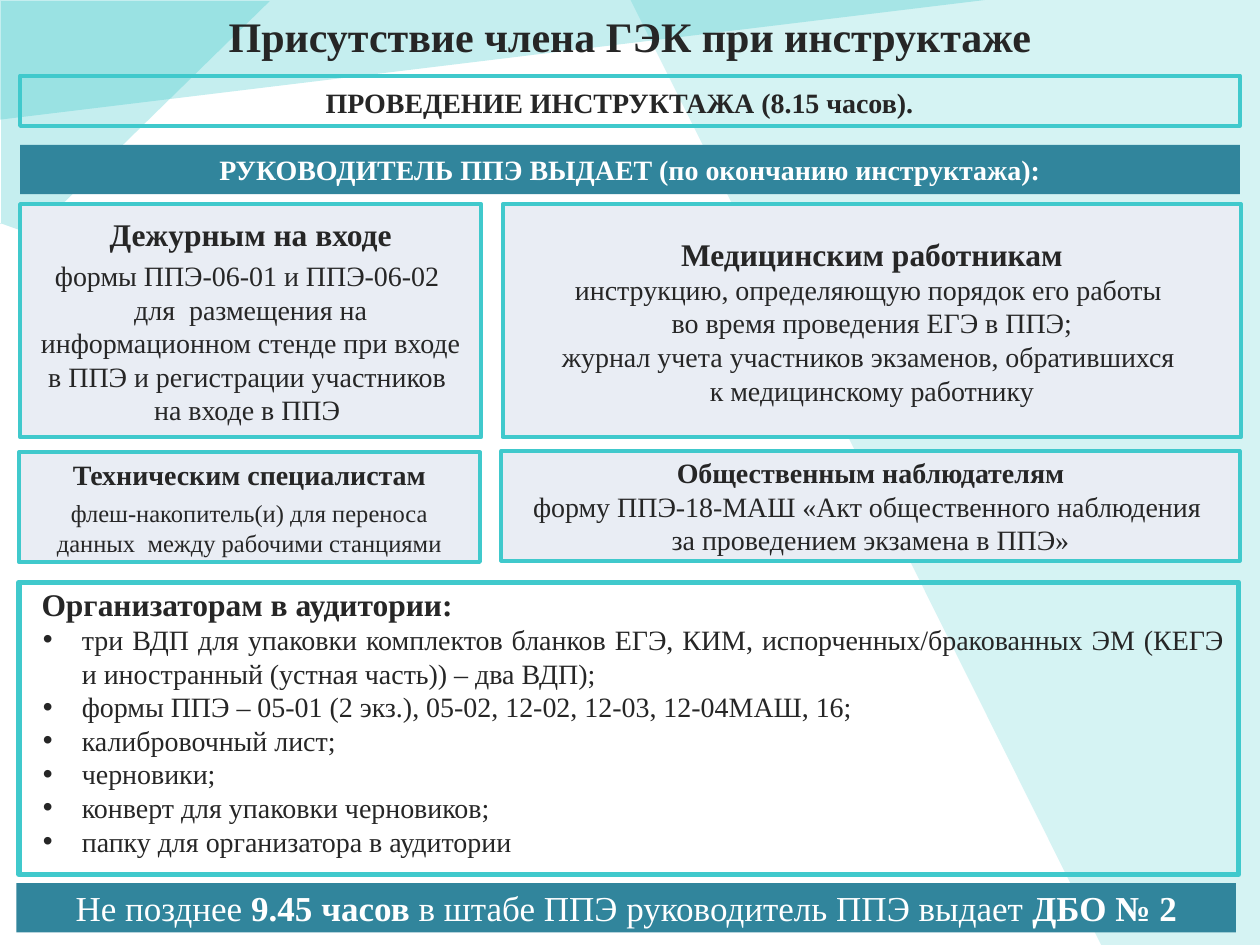
import pptx
import pptx.dml.color
import pptx.enum.shapes
import pptx.enum.text
import pptx.oxml
import pptx.oxml.ns
import pptx.util
from lxml import etree

Inches = pptx.util.Inches
Pt = pptx.util.Pt
ALIGN = pptx.enum.text.PP_ALIGN
ANCHOR = pptx.enum.text.MSO_ANCHOR

FONT = "Times New Roman"
DARK, WHITE = "262626", "FFFFFF"
TURQUOISE, BLUE, PALE = "40C9CC", "31859C", "E9EDF4"
BACKDROP = "20C0C4"
INSETS = (0.1, 0.05, 0.1, 0.05)

# Backdrop: outline points and opacity in percent
BACKDROP_SHAPES = [
    ([(10.04, 7.5), (8.74, 7.5), (5, -0.01), (10.04, -0.01)], 19),
    ([(7.82, 0), (0, 0.95), (0, -0.01)], 26),
    ([(0, 1.77), (0.25, 1.86), (2.14, 0.01), (0.01, 0.01), (0.01, 1.78)], 26),
]

# A paragraph is its runs (text, bold), then size and space before
TITLE = [([("Присутствие члена ГЭК при инструктаже", True)], 24, 0)]
BRIEFING = [([("ПРОВЕДЕНИЕ ИНСТРУКТАЖА (8.15 часов). ", True)], 16, 0)]

BANNERS = [
    ((0.16, 1.15), [([("РУКОВОДИТЕЛЬ ППЭ ВЫДАЕТ (по окончанию инструктажа):", True)], 16, 3.9)]),
    ((0.13, 7.01), [([
        ("Не позднее ", False),
        ("9.45 часов", True),
        (" в штабе ППЭ руководитель ППЭ выдает ", False),
        ("ДБО № 2", True),
    ], 20, 3.9)]),
]

CARDS = [
    ((0.16, 1.62, 3.66, 1.85), [
        ([("Дежурным на входе", True)], 18, 4.4),
        ([("формы ППЭ-06-01 и ППЭ-06-02 \nдля  размещения на информационном стенде "
           "при входе в ППЭ и регистрации участников \nна входе в ППЭ ", False)], 16, 3.4),
    ]),
    ((3.99, 1.62, 5.86, 1.85), [
        ([("Медицинским работникам", True)], 18, 0),
        ([("инструкцию, определяющую порядок его работы \n"
           "во время проведения ЕГЭ в ППЭ;", False)], 16, 0),
        ([("журнал учета участников экзаменов, обратившихся \n"
           "к медицинскому работнику", False)], 16, 0),
    ]),
    ((0.15, 3.59, 3.66, 0.87), [
        ([("Техническим специалистам", True)], 16, 4.4),
        ([("флеш-накопитель(и) для переноса данных  между рабочими станциями", False)], 14, 4.4),
    ]),
    ((3.98, 3.58, 5.86, 0.87), [
        ([("Общественным наблюдателям", True)], 16, 0),
        ([("форму ППЭ-18-МАШ «Акт общественного наблюдения \n"
           "за проведением экзамена в ППЭ»", False)], 16, 0),
    ]),
]

ORGANIZER_HEADING = "Организаторам в аудитории:"
ORGANIZER_ITEMS = [
    "три ВДП для упаковки комплектов бланков ЕГЭ, КИМ, испорченных/бракованных ЭМ "
    "(КЕГЭ и иностранный (устная часть)) – два ВДП);",
    "формы ППЭ – 05-01 (2 экз.), 05-02, 12-02, 12-03, 12-04МАШ, 16;",
    "калибровочный лист;",
    "черновики;",
    "конверт для упаковки черновиков;",
    "папку для организатора в аудитории",
]


def rgb(value):
    return pptx.dml.color.RGBColor.from_string(value)


def paint(shape, fill=None, line=None, width=2.25, opacity=100):
    shape.shadow.inherit = False
    if fill:
        shape.fill.solid()
        shape.fill.fore_color.rgb = rgb(fill)
        if opacity < 100:
            color = shape.fill._xPr.find(".//" + pptx.oxml.ns.qn("a:srgbClr"))
            etree.SubElement(color, pptx.oxml.ns.qn("a:alpha"), val=str(opacity * 1000))
    else:
        shape.fill.background()
    if line:
        shape.line.color.rgb = rgb(line)
        shape.line.width = Pt(width)
    else:
        shape.line.fill.background()


def write(shape, paragraphs, color=DARK, align=ALIGN.CENTER, anchor=ANCHOR.MIDDLE,
          insets=INSETS):
    frame = shape.text_frame
    frame.word_wrap = True
    frame.vertical_anchor = anchor
    (frame.margin_left, frame.margin_top,
     frame.margin_right, frame.margin_bottom) = map(Inches, insets)
    for index, (runs, size, space_before) in enumerate(paragraphs):
        paragraph = frame.add_paragraph() if index else frame.paragraphs[0]
        paragraph.alignment = align
        paragraph.space_before = Pt(space_before)
        for text, bold in runs:
            for number, part in enumerate(text.split("\n")):
                if number:
                    paragraph.add_line_break()
                run = paragraph.add_run()
                run.text = part
                run.font.name = FONT
                run.font.size = Pt(size)
                run.font.bold = bold
                run.font.color.rgb = rgb(color)


def indent(paragraph, left, first=0, bullet=None):
    properties = paragraph._p.get_or_add_pPr()
    properties.set("marL", str(Inches(left)))
    properties.set("indent", str(Inches(first)))
    if bullet:
        etree.SubElement(properties, pptx.oxml.ns.qn("a:buFont"), typeface="Arial")
        etree.SubElement(properties, pptx.oxml.ns.qn("a:buChar"), char=bullet)


def add_box(slide, place, **style):
    shape = slide.shapes.add_shape(pptx.enum.shapes.MSO_SHAPE.RECTANGLE, *map(Inches, place))
    paint(shape, **style)
    return shape


def add_text(slide, place, paragraphs, **style):
    box = slide.shapes.add_textbox(*map(Inches, place))
    write(box, paragraphs, **style)
    return box


def main():
    presentation = pptx.Presentation()
    presentation.slide_width, presentation.slide_height = Inches(10), Inches(7.5)
    slide = presentation.slides.add_slide(presentation.slide_layouts[6])

    # Backdrop
    for points, opacity in BACKDROP_SHAPES:
        start, *rest = [(Inches(x), Inches(y)) for x, y in points]
        builder = slide.shapes.build_freeform(*start)
        builder.add_line_segments(rest, close=True)
        paint(builder.convert_to_shape(), fill=BACKDROP, opacity=opacity)

    add_text(slide, (0.1, -0.19, 9.8, 0.95), TITLE)

    # Organizers: frame and bulleted list
    add_box(slide, (0.15, 4.62, 9.68, 2.32), line=TURQUOISE, width=3)
    paragraphs = [([(ORGANIZER_HEADING, True)], 18, 0)]
    paragraphs += [([(item, False)], 16, 0) for item in ORGANIZER_ITEMS]
    organizers = add_text(slide, (0.32, 4.62, 9.4, 2.2), paragraphs,
                          align=ALIGN.JUSTIFY, insets=(0, 0.01, 0, 0))
    heading, *items = organizers.text_frame.paragraphs
    indent(heading, 0.01)
    for item in items:
        indent(item, 0.33, -0.31, "•")

    # Banners and recipient cards
    for position, paragraphs in BANNERS:
        write(add_box(slide, (*position, 9.68, 0.39), fill=BLUE), paragraphs, color=WHITE)
    for place, paragraphs in CARDS:
        write(add_box(slide, place, fill=PALE, line=TURQUOISE), paragraphs)

    # Briefing time
    add_box(slide, (0.16, 0.6, 9.68, 0.4), line=TURQUOISE)
    add_text(slide, (0.54, 0.63, 8.81, 0.37), BRIEFING, anchor=ANCHOR.TOP)

    presentation.save("out.pptx")


if __name__ == "__main__":
    main()
